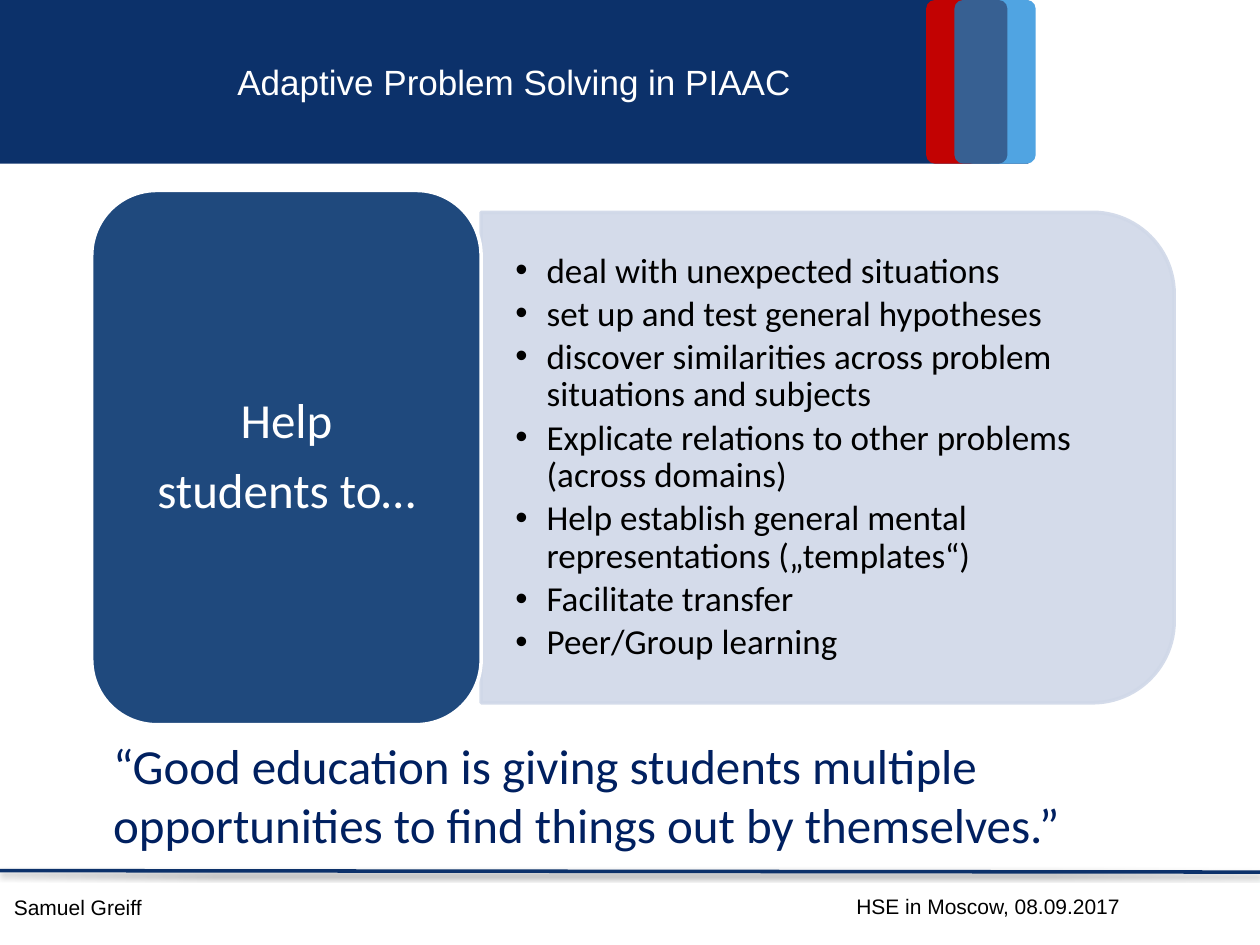
from lxml import etree
from pptx import Presentation
from pptx.dml.color import RGBColor
from pptx.enum.shapes import MSO_CONNECTOR, MSO_SHAPE
from pptx.enum.text import MSO_ANCHOR, MSO_AUTO_SIZE, PP_ALIGN
from pptx.oxml.ns import qn
from pptx.util import Cm, Pt

RECT, ROUND = MSO_SHAPE.ROUNDED_RECTANGLE, MSO_SHAPE.ROUND_2_SAME_RECTANGLE
STRAIGHT = MSO_CONNECTOR.STRAIGHT
TOP, MIDDLE = MSO_ANCHOR.TOP, MSO_ANCHOR.MIDDLE
LEFT, CENTER, RIGHT = PP_ALIGN.LEFT, PP_ALIGN.CENTER, PP_ALIGN.RIGHT
HUES = {
    "navy": "0C316A", "sky": "50A4E2", "red": "C20202", "steel": "376092",
    "card": "1F497D", "pale": "D0D8E8", "quote": "002060",
    "white": "FFFFFF", "black": "000000",
}
GOALS = [
    "deal with unexpected situations",
    "set up and test general hypotheses",
    "discover similarities across problem situations and subjects",
    "Explicate relations to other problems (across domains)",
    "Help establish general mental representations („templates“)",
    "Facilitate transfer",
    "Peer/Group learning",
]


def rgb(name):
    """Return the named colour."""
    return RGBColor.from_string(HUES[name])


def sub(node, tag, **attrs):
    """Append a DrawingML child to a node."""
    return etree.SubElement(node, qn(tag), attrs)


def place(shape, x, y, w, h):
    """Move and size a shape in centimetres."""
    shape.left, shape.top, shape.width, shape.height = map(Cm, (x, y, w, h))


def write(shape, lines, size=20, font="Calibri", hue="black", align=LEFT,
          anchor=TOP, pad=(0.25, 0.13), lead=None, after=0, bullet=False):
    """Fill a shape with formatted paragraphs."""
    frame = shape.text_frame
    frame.word_wrap = True
    frame.auto_size = MSO_AUTO_SIZE.NONE
    frame.vertical_anchor = anchor
    frame.margin_left = frame.margin_right = Cm(pad[0])
    frame.margin_top = frame.margin_bottom = Cm(pad[1])
    frame.text = "\n".join(lines)
    for para in frame.paragraphs:
        if bullet:
            props = para._p.get_or_add_pPr()
            props.set("marL", str(Cm(0.63)))
            props.set("indent", str(-Cm(0.63)))
            sub(props, "a:buFont", typeface="Arial")
            sub(props, "a:buChar", char="•")
        para.alignment = align
        para.line_spacing = lead
        para.space_after = Pt(after)
        para.font.size = Pt(size)
        para.font.name = font
        para.font.color.rgb = rgb(hue)


def label(slide, box, lines, **style):
    """Add a text box."""
    write(slide.shapes.add_textbox(*map(Cm, box)), lines, **style)


def block(slide, kind, box, fill, line=None):
    """Add a flat filled shape."""
    shape = slide.shapes.add_shape(kind, *map(Cm, box))
    shape.shadow.inherit = False
    shape.fill.solid()
    shape.fill.fore_color.rgb = rgb(fill)
    if line:
        shape.line.color.rgb = rgb(line)
        shape.line.width = Pt(2)
    else:
        shape.line.fill.background()
    return shape


def header(slide, x, y, w, h):
    """Draw the title band and its coloured tabs."""
    title = slide.shapes.title
    place(title, x, y, w, h)
    title.fill.solid()
    title.fill.fore_color.rgb = rgb("navy")
    write(title, ["Adaptive Problem Solving in PIAAC"], font="Arial",
          hue="white", align=CENTER, anchor=MIDDLE)
    start, step = x + w - 2.06, 0.57
    for spot, hue in ((2, "sky"), (0, "red"), (1, "steel")):
        block(slide, RECT, (start + spot * step, y, 1.07, h), hue)


def panel(slide, x, y, w, h):
    """Draw the dark card with the list of goals beside it."""
    side, inset = 7.85, 0.44
    wide, tall = w - side, h - 2 * inset
    back = block(slide, ROUND, (x + side + (wide - tall) / 2,
                                y + (h - wide) / 2, tall, wide),
                 "pale", "pale")
    back.rotation = 90
    for tone in back._element.spPr.iter(qn("a:srgbClr")):
        sub(tone, "a:alpha", val="90000")
    label(slide, (x + side, y + 1, wide - 0.48, h - 2), GOALS, anchor=MIDDLE,
          pad=(0.69, 0.36), lead=0.9, after=3, bullet=True)
    card = block(slide, RECT, (x, y, side, h), "card", "white")
    write(card, ["Help", "students to…"], size=28, hue="white", align=CENTER,
          anchor=MIDDLE, pad=(0.69, 0.53), lead=0.9, after=9.8)


def quote(slide, x, y, w, h):
    """Write the closing quotation."""
    label(slide, (x, y, w, h),
          ["“Good education is giving students multiple opportunities "
           "to find things out by themselves.”"], size=28, hue="quote")


def footer(slide, x, y, w):
    """Draw the shadowed rule with author and event below it."""
    rule = slide.shapes.add_connector(
        STRAIGHT, Cm(x), Cm(y), Cm(x + w), Cm(y + 0.03))
    rule.line.color.rgb = rgb("navy")
    rule.line.width = Pt(2)
    glow = sub(sub(rule._element.spPr, "a:effectLst"), "a:outerShdw",
               blurRad=str(Pt(3.1)), dist=str(Pt(1.6)), dir="5400000",
               rotWithShape="0")
    sub(sub(glow, "a:srgbClr", val=HUES["black"]), "a:alpha", val="38000")
    style = {"size": 12, "font": "Arial"}
    label(slide, (x + 11.73, y + 0.33, 11.1, 0.77),
          ["HSE in Moscow, 08.09.2017"], align=RIGHT, **style)
    label(slide, (x + 0.03, y + 0.36, 13.84, 0.77), ["Samuel Greiff"], **style)


def main():
    """Build and save the slide."""
    deck = Presentation()
    deck.slide_width, deck.slide_height = Cm(25.4), Cm(19.05)
    slide = deck.slides.add_slide(deck.slide_layouts[5])
    header(slide, 0, 0, 20.73, 3.3)
    footer(slide, 0, 17.55, 25.4)
    quote(slide, 2.03, 14.7, 22.45, 2.7)
    panel(slide, 1.85, 3.84, 21.82, 10.77)
    deck.save("out.pptx")


if __name__ == "__main__":
    main()
